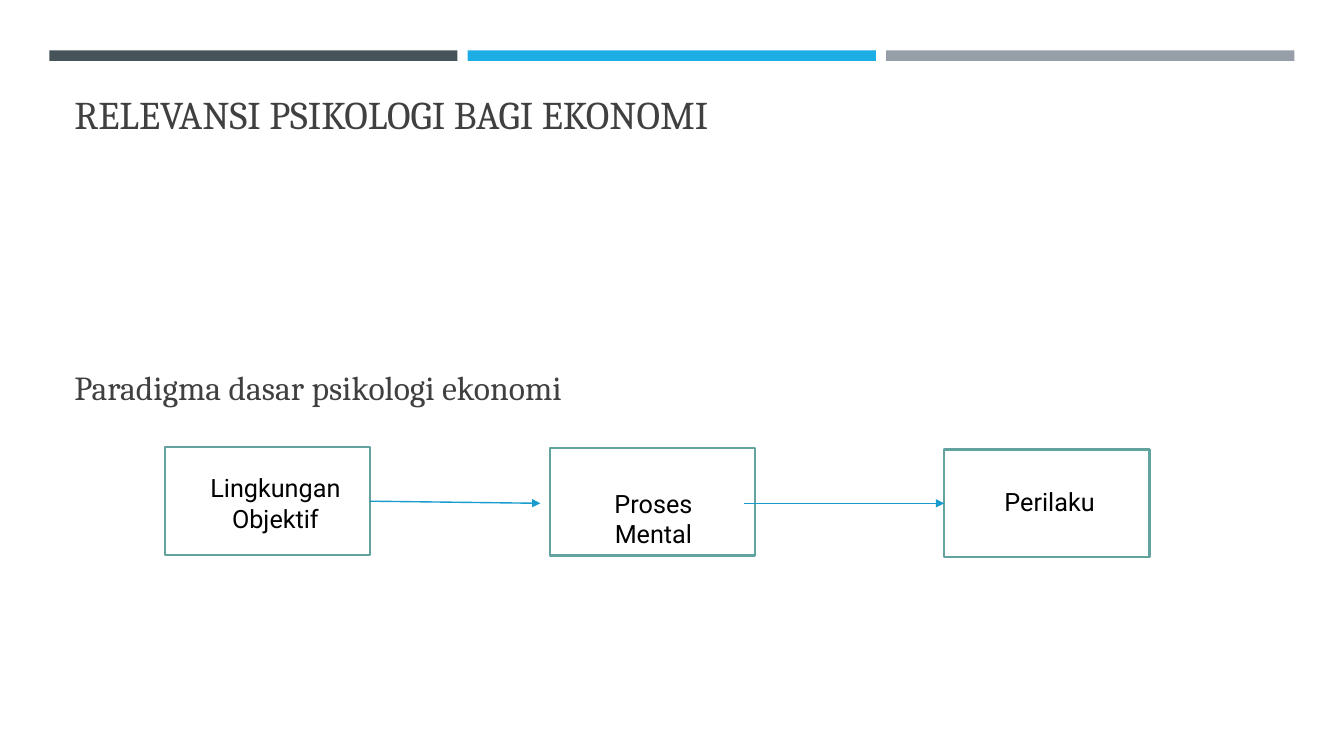
from dataclasses import dataclass

from lxml.etree import SubElement
from pptx import Presentation
from pptx.dml.color import RGBColor as Color
from pptx.enum.shapes import MSO_CONNECTOR as Connector, MSO_SHAPE as Preset
from pptx.enum.text import MSO_ANCHOR as Anchor, PP_ALIGN as Align
from pptx.oxml.ns import qn
from pptx.util import Pt


@dataclass(frozen=True)
class Theme:
    bars: tuple = ("465359", "1CADE4", "969FA7")
    heading: str = "404040"
    label: str = "000000"
    box_fill: str = "FFFFFF"
    box_line: str = "62A39F"
    arrow: str = "189CCE"
    heading_font: str = "Cambria"
    label_font: str = "Roboto"
    title_size: int = 28
    body_size: int = 24
    label_size: int = 18


class SlideBuilder:
    def __init__(self, slide, theme):
        self.slide = slide
        self.theme = theme

    def rectangle(self, left, top, width, height, fill, line=None):
        shape = self.slide.shapes.add_shape(
            Preset.RECTANGLE, Pt(left), Pt(top), Pt(width), Pt(height))
        shape.shadow.inherit = False
        shape.fill.solid()
        shape.fill.fore_color.rgb = Color.from_string(fill)
        if line:
            shape.line.color.rgb = Color.from_string(line)
            shape.line.width = Pt(1.75)
        else:
            shape.line.fill.background()
        return shape

    def text(self, left, top, width, height, words, size, font, color, anchor, align):
        shape = self.slide.shapes.add_textbox(Pt(left), Pt(top), Pt(width), Pt(height))
        frame = shape.text_frame
        frame.word_wrap = True
        frame.vertical_anchor = anchor
        paragraph = frame.paragraphs[0]
        paragraph.text = words
        paragraph.alignment = align
        paragraph.font.size = Pt(size)
        paragraph.font.name = font
        paragraph.font.color.rgb = Color.from_string(color)

    def heading(self, top, height, words, size, anchor):
        self.text(46, top, 868, height, words, size, self.theme.heading_font,
                  self.theme.heading, anchor, Align.LEFT)

    def label(self, left, top, height, words):
        self.text(left, top, 128.5, height, words, self.theme.label_size,
                  self.theme.label_font, self.theme.label, Anchor.TOP, Align.CENTER)

    def box(self, left, top):
        return self.rectangle(left, top, 146.5, 77, self.theme.box_fill, self.theme.box_line)

    def arrow(self, start, end, source=None, target=None):
        connector = self.slide.shapes.add_connector(
            Connector.STRAIGHT, *(Pt(value) for value in (*start, *end)))
        if source:
            connector.begin_connect(source, 3)
        if target:
            connector.end_connect(target, 1)
        connector.line.color.rgb = Color.from_string(self.theme.arrow)
        connector.line.width = Pt(1)
        SubElement(connector.line._get_or_add_ln(), qn("a:tailEnd"), type="triangle")
        SubElement(connector._element.spPr, qn("a:effectLst"))


def main():
    presentation = Presentation()
    presentation.slide_width = Pt(960)
    presentation.slide_height = Pt(540)
    theme = Theme()
    builder = SlideBuilder(
        presentation.slides.add_slide(presentation.slide_layouts[6]), theme)

    for index, color in enumerate(theme.bars):
        builder.rectangle(35.2 + 298.9 * index, 36, 291.6, 7.5, color)

    builder.heading(55.5, 46, "RELEVANSI PSIKOLOGI BAGI EKONOMI", theme.title_size, Anchor.BOTTOM)
    builder.heading(256.5, 40, "Paradigma dasar psikologi ekonomi", theme.body_size, Anchor.MIDDLE)

    environment, process, behaviour = [
        builder.box(left, top) for left, top in ((118, 319.5), (393, 320), (674.5, 321))]

    for left, top, height, words in (
        (132.5, 334, 51, "Lingkungan Objektif"),
        (402.5, 345, 51, "Proses Mental"),
        (685.5, 343.5, 29, "Perilaku"),
    ):
        builder.label(left, top, height, words)

    builder.arrow((264.5, 358), (386, 359.5), source=environment)
    builder.arrow((531.5, 359.5), (674.5, 359.5), target=behaviour)

    presentation.save("out.pptx")


if __name__ == "__main__":
    main()
